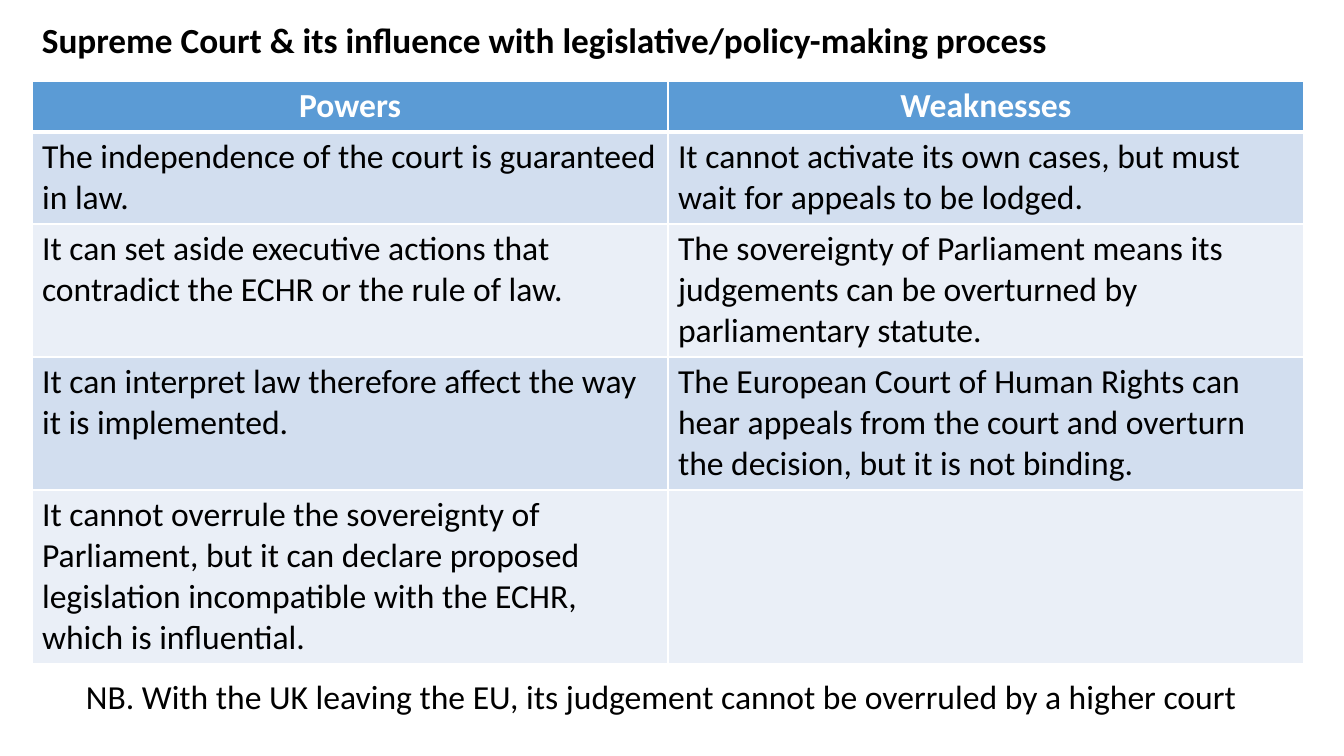
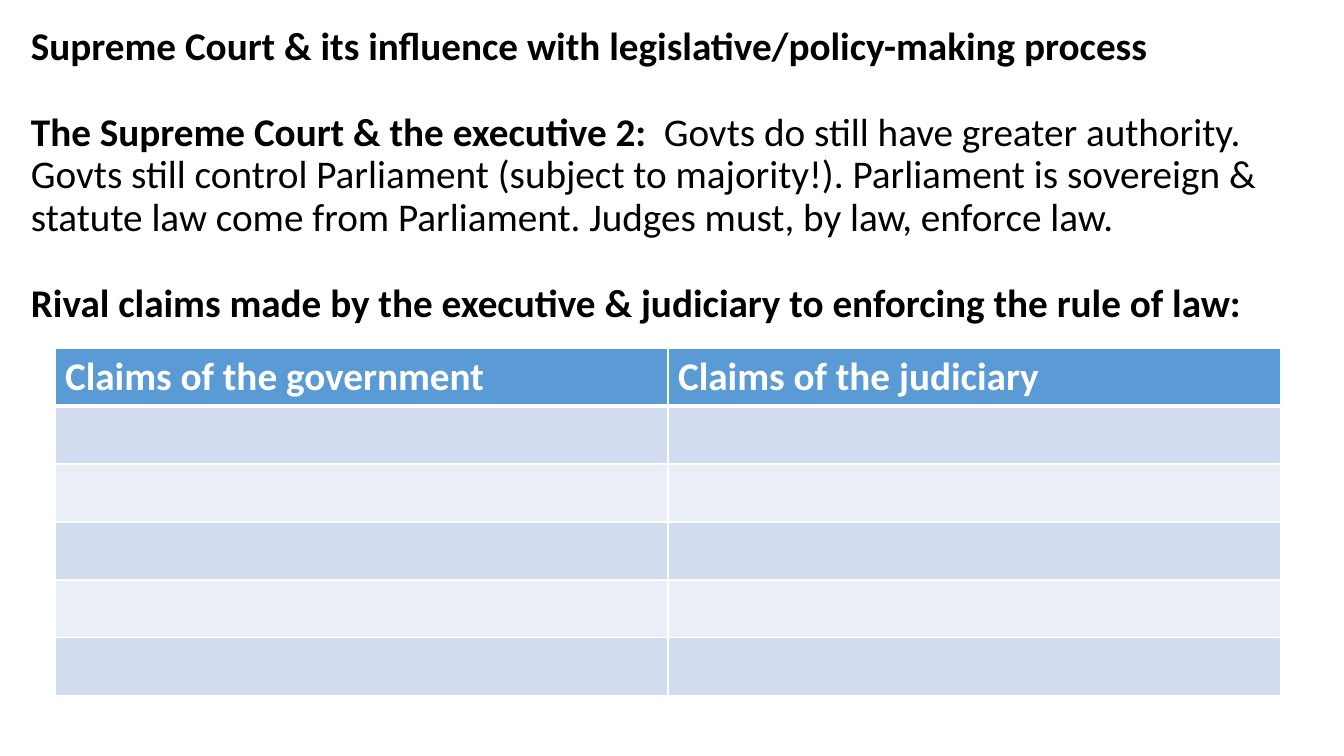
from pptx import Presentation
from pptx import util as u
from pptx.dml.color import RGBColor
from pptx.enum import text
from pptx.oxml.ns import qn
from lxml import etree

HEADLINE = "Supreme Court & its influence with legislative/policy-making process"

POWERS = {
    "header": ("Powers", "Weaknesses"),
    "body": [
        ("The independence of the court is guaranteed in law.",
         "It cannot activate its own cases, but must wait for appeals to be lodged."),
        ("It can set aside executive actions that contradict the ECHR or the rule of law.",
         "The sovereignty of Parliament means its judgements can be overturned by parliamentary statute."),
        ("It can interpret law therefore affect the way it is implemented.",
         "The European Court of Human Rights can hear appeals from the court and overturn the decision, "
         "but it is not binding."),
        ("It cannot overrule the sovereignty of Parliament, but it can declare proposed legislation "
         "incompatible with the ECHR, which is influential.", ""),
    ],
    "place": (32, 81, 1272),
    "heights": [51, 92, 133, 133, 174],
    "size": "table",
    "header_align": text.PP_ALIGN.CENTER,
}
BREXIT_NOTE = "NB. With the UK leaving the EU, its judgement cannot be overruled by a higher court"

EXECUTIVE = [
    [(HEADLINE, True)],
    [("The Supreme Court & the executive 2:  ", True),
     ("Govts do still have greater authority. Govts still control Parliament (subject to majority!). "
      "Parliament is sovereign & statute law come from Parliament. Judges must, by law, enforce law.", False)],
    [("Rival claims made by the executive & judiciary to enforcing the rule of law:", True)],
]
CLAIMS = {
    "header": ("Claims of the government", "Claims of the judiciary"),
    "body": [("", "")] * 5,
    "place": (55, 348, 1226),
    "heights": [58] * 6,
    "size": "body",
    "header_align": text.PP_ALIGN.LEFT,
}

THEME = {
    "font": "Calibri",
    "ink": "000000",
    "paper": "FFFFFF",
    "header": "5B9BD5",
    "bands": ("D2DEEF", "EAEFF7"),
    "sizes": {"title": 25.2, "table": 24, "body": 28},
    "rule": 1,
    "header_rule": 3,
}
PX = 914400 / 100.8


def px(length):
    return u.Emu(round(length * PX))


def write(paragraph, runs, size, colour, layout):
    for name, value in layout.items():
        setattr(paragraph, name, value)
    for words, bold in runs:
        run = paragraph.add_run()
        run.text = words
        look = {"name": THEME["font"], "size": u.Pt(THEME["sizes"][size]), "bold": bold}
        for name, value in look.items():
            setattr(run.font, name, value)
        run.font.color.rgb = RGBColor.from_string(colour)


def add_text(slide, place, paragraphs, size, **layout):
    frame = slide.shapes.add_textbox(*map(px, place)).text_frame
    frame.word_wrap = True
    for index, runs in enumerate(paragraphs):
        paragraph = frame.add_paragraph() if index else frame.paragraphs[0]
        write(paragraph, runs, size, THEME["ink"], layout)


def rule_cell(cell, widths):
    properties = cell._tc.get_or_add_tcPr()
    for side, width in widths.items():
        line = etree.SubElement(properties, qn(f"a:ln{side}"), w=str(u.Pt(width)))
        fill = etree.SubElement(line, qn("a:solidFill"))
        etree.SubElement(fill, qn("a:srgbClr"), val=THEME["paper"])


def add_comparison(slide, content):
    left, top, width = content["place"]
    heights = content["heights"]
    rows = [content["header"], *content["body"]]
    columns = len(content["header"])
    table = slide.shapes.add_table(
        len(rows), columns, *map(px, (left, top, width, sum(heights)))).table
    for column in table.columns:
        column.width = px(width / columns)
    for r, (entries, height) in enumerate(zip(rows, heights)):
        table.rows[r].height = px(height)
        heading = r == 0
        shade = THEME["header"] if heading else THEME["bands"][(r - 1) % 2]
        colour = THEME["paper"] if heading else THEME["ink"]
        align = content["header_align"] if heading else text.PP_ALIGN.LEFT
        rules = dict.fromkeys("LRTB", THEME["rule"])
        if r < 2:
            rules["B" if heading else "T"] = THEME["header_rule"]
        for c, words in enumerate(entries):
            cell = table.cell(r, c)
            rule_cell(cell, rules)
            cell.fill.solid()
            cell.fill.fore_color.rgb = RGBColor.from_string(shade)
            if words:
                write(cell.text_frame.paragraphs[0], [(words, heading)],
                      content["size"], colour, {"alignment": align})


def main():
    deck = Presentation()
    deck.slide_width, deck.slide_height = px(1344), px(756)
    blank = deck.slide_layouts[6]

    powers = deck.slides.add_slide(blank)
    add_text(powers, (32, 13, 1160, 53), [[(HEADLINE, True)]], "title")
    add_comparison(powers, POWERS)
    add_text(powers, (76, 671, 1246, 50), [[(BREXIT_NOTE, False)]], "table")

    claims = deck.slides.add_slide(blank)
    add_text(claims, (21, 22, 1294, 320), EXECUTIVE, "body",
             line_spacing=0.9, space_after=u.Pt(31))
    add_comparison(claims, CLAIMS)

    deck.save("out.pptx")


if __name__ == "__main__":
    main()
